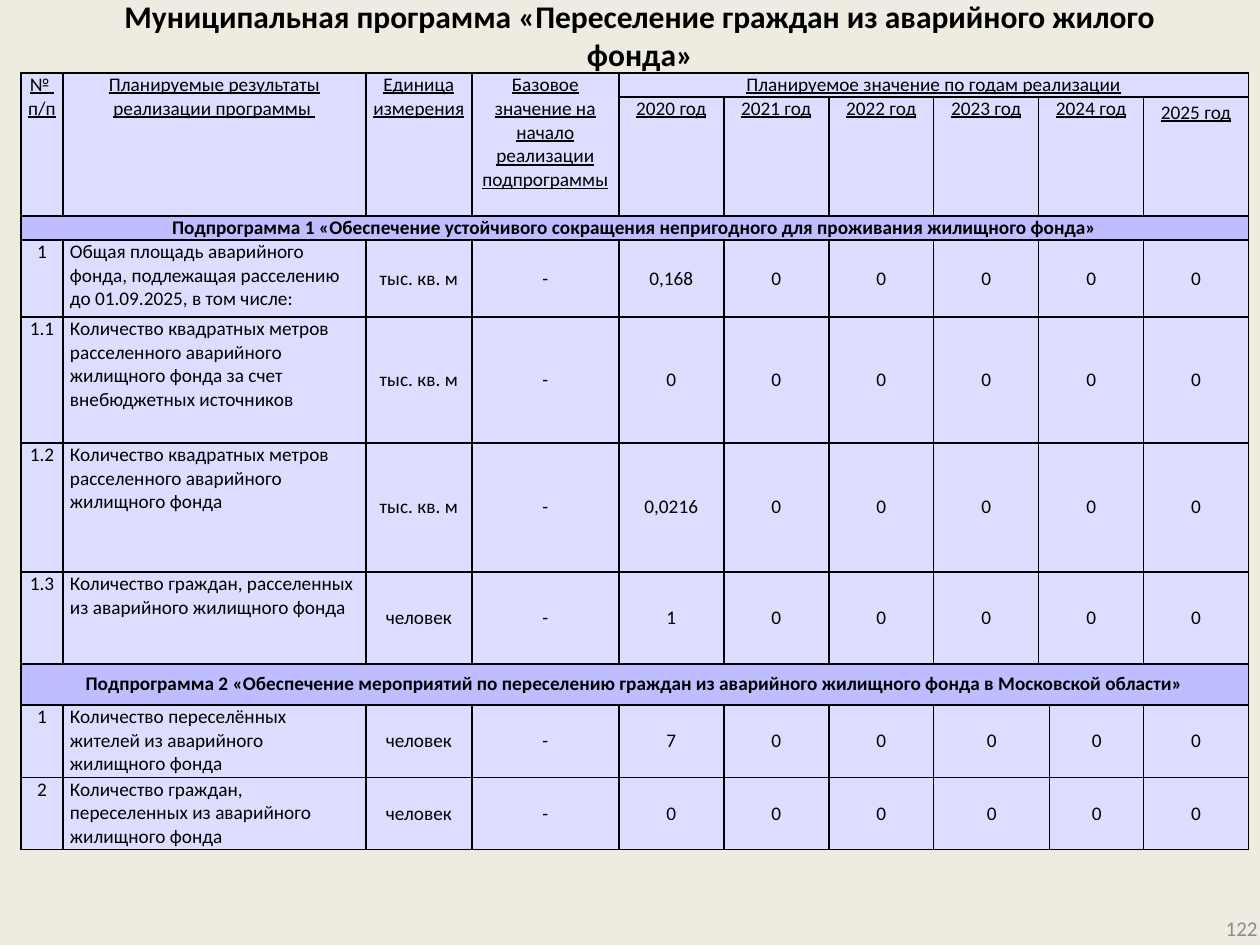
"""Build the slide with the target table of a housing resettlement programme."""
from lxml import etree
from pptx import Presentation
from pptx.dml.color import RGBColor
from pptx.enum.text import MSO_ANCHOR, PP_ALIGN
from pptx.oxml.ns import qn
from pptx.util import Pt

LEFT, CENTER, RIGHT = PP_ALIGN.LEFT, PP_ALIGN.CENTER, PP_ALIGN.RIGHT
TOP, MIDDLE = MSO_ANCHOR.TOP, MSO_ANCHOR.MIDDLE
PX = 914400 // 126
FONT = "Calibri"
COLORS = {"bg": "EEECE1", "body": "DDDDFF", "band": "BDBDFF",
          "text": "000000", "number": "8C8C8C"}

TITLE = "Муниципальная программа «Переселение граждан из аварийного жилого фонда»"
PAGE = "122"
HEADERS = [
    "№ \nп/п",
    "Планируемые результаты реализации программы ",
    "Единица измерения",
    "Базовое значение на начало реализации подпрограммы",
]
YEARS_HEADER = "Планируемое значение по годам реализации"
YEARS = [f"{year} год" for year in range(2020, 2026)]
SECTIONS = [
    {"title": "Подпрограмма 1 «Обеспечение устойчивого сокращения непригодного "
              "для проживания жилищного фонда»",
     "anchor": TOP, "wide_col": 8,
     "rows": [
         ("1", "Общая площадь аварийного фонда, подлежащая расселению "
               "до 01.09.2025, в том числе:", "тыс. кв. м", "0,168"),
         ("1.1", "Количество квадратных метров расселенного аварийного жилищного "
                 "фонда за счет внебюджетных источников", "тыс. кв. м", "0"),
         ("1.2", "Количество квадратных метров расселенного аварийного жилищного "
                 "фонда", "тыс. кв. м", "0,0216"),
         ("1.3", "Количество граждан, расселенных из аварийного жилищного фонда",
          "человек", "1"),
     ]},
    {"title": "Подпрограмма 2 «Обеспечение мероприятий по переселению граждан "
              "из аварийного жилищного фонда в Московской области»",
     "anchor": MIDDLE, "wide_col": 7,
     "rows": [
         ("1", "Количество переселённых жителей из аварийного жилищного фонда",
          "человек", "7"),
         ("2", "Количество граждан, переселенных из аварийного жилищного фонда",
          "человек", "0"),
     ]},
]
BASE = "-"
LATER_VALUES = ["0"] * 5
COL_WIDTHS = [42, 303, 106, 147, 105, 105, 105, 105, 11, 94, 105]
ROW_HEIGHTS = [24, 119, 24, 77, 126, 129, 92, 41, 73, 72]
FIRST_YEAR_COL = len(HEADERS)
LAST_COL = len(COL_WIDTHS) - 1


def write(tf, text, size, align=CENTER, color="text", bold=False,
          underline=False, spacing=None):
    tf.word_wrap = True
    for i, line in enumerate(text.split("\n")):
        p = tf.add_paragraph() if i else tf.paragraphs[0]
        p.alignment = align
        if spacing:
            p.line_spacing = spacing
        r = p.add_run()
        r.text = line
        r.font.name, r.font.size = FONT, Pt(size)
        r.font.bold, r.font.underline = bold, underline
        r.font.color.rgb = RGBColor.from_string(COLORS[color])


def add_text(slide, box, text, size, **style):
    sp = slide.shapes.add_textbox(*(v * PX for v in box))
    sp.text_frame.vertical_anchor = MIDDLE
    write(sp.text_frame, text, size, **style)


def style_cell(cell):
    cell.fill.solid()
    cell.fill.fore_color.rgb = RGBColor.from_string(COLORS["body"])
    cell.margin_left = cell.margin_right = 7 * PX
    cell.margin_top = cell.margin_bottom = 0
    props = cell._tc.get_or_add_tcPr()
    for i, side in enumerate(("lnL", "lnR", "lnT", "lnB")):
        ln = etree.Element(qn(f"a:{side}"), w=str(Pt(1)))
        fill = etree.SubElement(ln, qn("a:solidFill"))
        etree.SubElement(fill, qn("a:srgbClr"), val=COLORS["text"])
        props.insert(i, ln)


def fill_cell(table, row, col, text, anchor=TOP, rows=1, cols=1, **style):
    cell = table.cell(row, col)
    if rows * cols > 1:
        cell.merge(table.cell(row + rows - 1, col + cols - 1))
    cell.vertical_anchor = anchor
    write(cell.text_frame, text, 11, **style)
    return cell


def fill_years(table, row, values, wide_col, anchor=TOP, **style):
    col = FIRST_YEAR_COL
    for value in values:
        span = 2 if col == wide_col else 1
        spacing = 1.15 if value == YEARS[-1] else None
        fill_cell(table, row, col, value, anchor, cols=span, spacing=spacing, **style)
        col += span


def add_targets(slide):
    frame = slide.shapes.add_table(
        len(ROW_HEIGHTS), len(COL_WIDTHS), 21 * PX, 73 * PX,
        sum(COL_WIDTHS) * PX, sum(ROW_HEIGHTS) * PX)
    table = frame.table
    for col, width in zip(table.columns, COL_WIDTHS):
        col.width = width * PX
    for row, height in zip(table.rows, ROW_HEIGHTS):
        row.height = height * PX
    for cell in table.iter_cells():
        style_cell(cell)

    for col, text in enumerate(HEADERS):
        fill_cell(table, 0, col, text, rows=2, underline=True)
    fill_cell(table, 0, FIRST_YEAR_COL, YEARS_HEADER,
              cols=LAST_COL - FIRST_YEAR_COL + 1, underline=True)
    fill_years(table, 1, YEARS, SECTIONS[0]["wide_col"], underline=True)

    row = 2
    for section in SECTIONS:
        band = fill_cell(table, row, 0, section["title"], section["anchor"],
                         cols=LAST_COL + 1, bold=True)
        band.fill.fore_color.rgb = RGBColor.from_string(COLORS["band"])
        for number, result, unit, first in section["rows"]:
            row += 1
            fill_cell(table, row, 0, number)
            fill_cell(table, row, 1, result, align=LEFT)
            fill_cell(table, row, 2, unit, MIDDLE)
            fill_cell(table, row, 3, BASE, MIDDLE)
            fill_years(table, row, [first] + LATER_VALUES,
                       section["wide_col"], MIDDLE)
        row += 1


def main():
    prs = Presentation()
    prs.slide_width, prs.slide_height = 1260 * PX, 945 * PX
    slide = prs.slides.add_slide(prs.slide_layouts[6])
    slide.background.fill.solid()
    slide.background.fill.fore_color.rgb = RGBColor.from_string(COLORS["bg"])
    add_text(slide, (73, 14, 1134, 42), TITLE, 18, bold=True)
    add_targets(slide)
    add_text(slide, (976, 903, 294, 50), PAGE, 12, align=RIGHT, color="number")
    prs.save("out.pptx")


if __name__ == "__main__":
    main()
